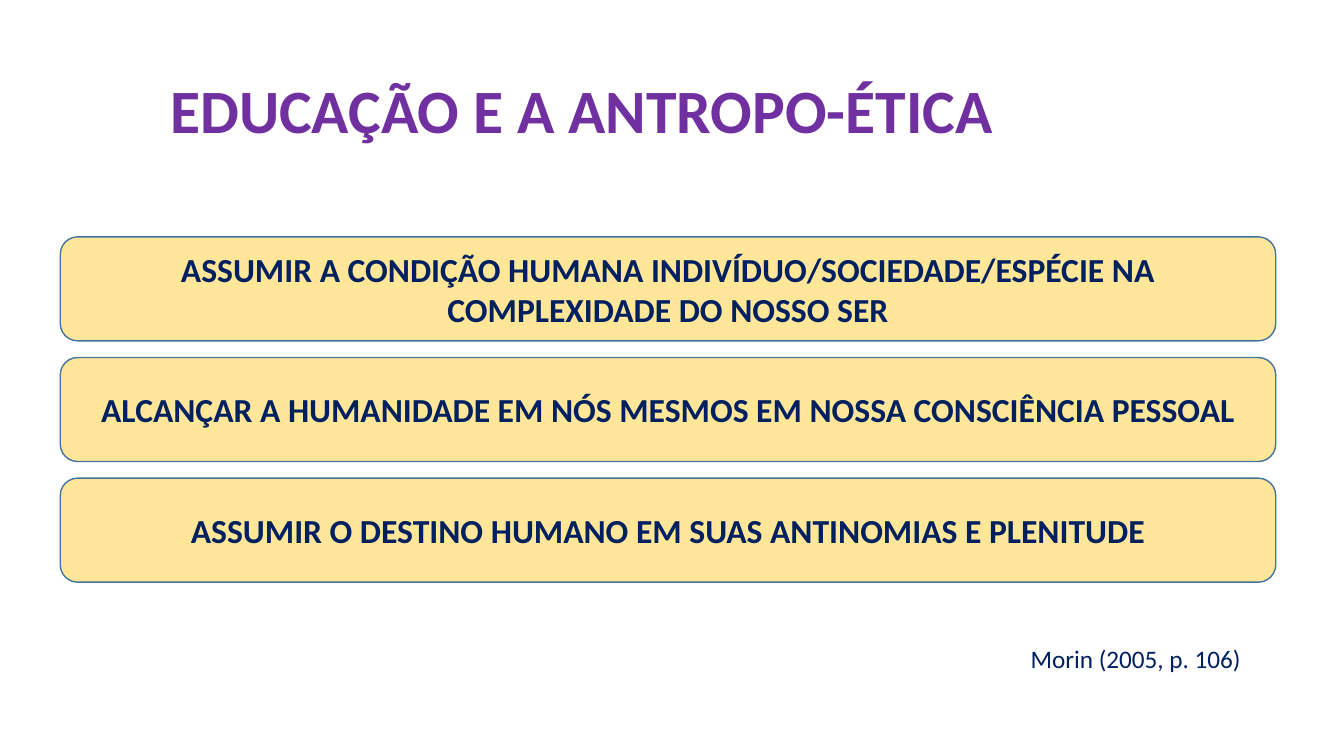
from pptx import Presentation
from pptx.dml.color import RGBColor
from pptx.enum.shapes import MSO_SHAPE
from pptx.enum.text import MSO_ANCHOR, PP_ALIGN
from pptx.util import Cm, Pt

TITLE = "EDUCAÇÃO E A ANTROPO-ÉTICA"
PRINCIPLES = [
    "ASSUMIR A CONDIÇÃO HUMANA INDIVÍDUO/SOCIEDADE/ESPÉCIE NA COMPLEXIDADE DO NOSSO SER",
    "ALCANÇAR A HUMANIDADE EM NÓS MESMOS EM NOSSA CONSCIÊNCIA PESSOAL",
    "ASSUMIR O DESTINO HUMANO EM SUAS ANTINOMIAS E PLENITUDE",
]
CITATION = "Morin (2005, p. 106)"

PURPLE, NAVY, YELLOW, BLUE = "7030A0", "002060", "FFE699", "43739E"
FONT = "Calibri"

# Principle bars, in centimetres
BAR_LEFT, BAR_TOP, BAR_WIDTH, BAR_HEIGHT = 1.52, 5.97, 30.63, 2.62
BAR_PITCH = 3.04


def color(hex_code):
    return RGBColor.from_string(hex_code)


def write(shape, text, *, size, ink=NAVY, bold=False, align=PP_ALIGN.CENTER,
          anchor=MSO_ANCHOR.MIDDLE, line_spacing=None):
    frame = shape.text_frame
    frame.word_wrap = True
    frame.vertical_anchor = anchor
    paragraph = frame.paragraphs[0]
    paragraph.alignment = align
    paragraph.line_spacing = line_spacing
    run = paragraph.add_run()
    run.text = text
    run.font.name = FONT
    run.font.size = Pt(size)
    run.font.bold = bold
    run.font.color.rgb = color(ink)


def add_principle(slide, text, top):
    bar = slide.shapes.add_shape(MSO_SHAPE.ROUNDED_RECTANGLE, Cm(BAR_LEFT), Cm(top),
                                 Cm(BAR_WIDTH), Cm(BAR_HEIGHT))
    bar.shadow.inherit = False
    bar.fill.solid()
    bar.fill.fore_color.rgb = color(YELLOW)
    bar.line.color.rgb = color(BLUE)
    bar.line.width = Pt(1)
    write(bar, text, size=24, bold=True)


def main():
    deck = Presentation()
    deck.slide_width, deck.slide_height = Cm(33.87), Cm(19.05)
    slide = deck.slides.add_slide(deck.slide_layouts[6])

    title = slide.shapes.add_textbox(Cm(2.34), Cm(1.02), Cm(24.66), Cm(3.68))
    write(title, TITLE, size=44, ink=PURPLE, bold=True, line_spacing=0.9)

    for row, principle in enumerate(PRINCIPLES):
        add_principle(slide, principle, BAR_TOP + row * BAR_PITCH)

    citation = slide.shapes.add_textbox(Cm(25.58), Cm(16.08), Cm(5.94), Cm(1.02))
    write(citation, CITATION, size=18, align=PP_ALIGN.RIGHT, anchor=MSO_ANCHOR.TOP)

    deck.save("out.pptx")


if __name__ == "__main__":
    main()
